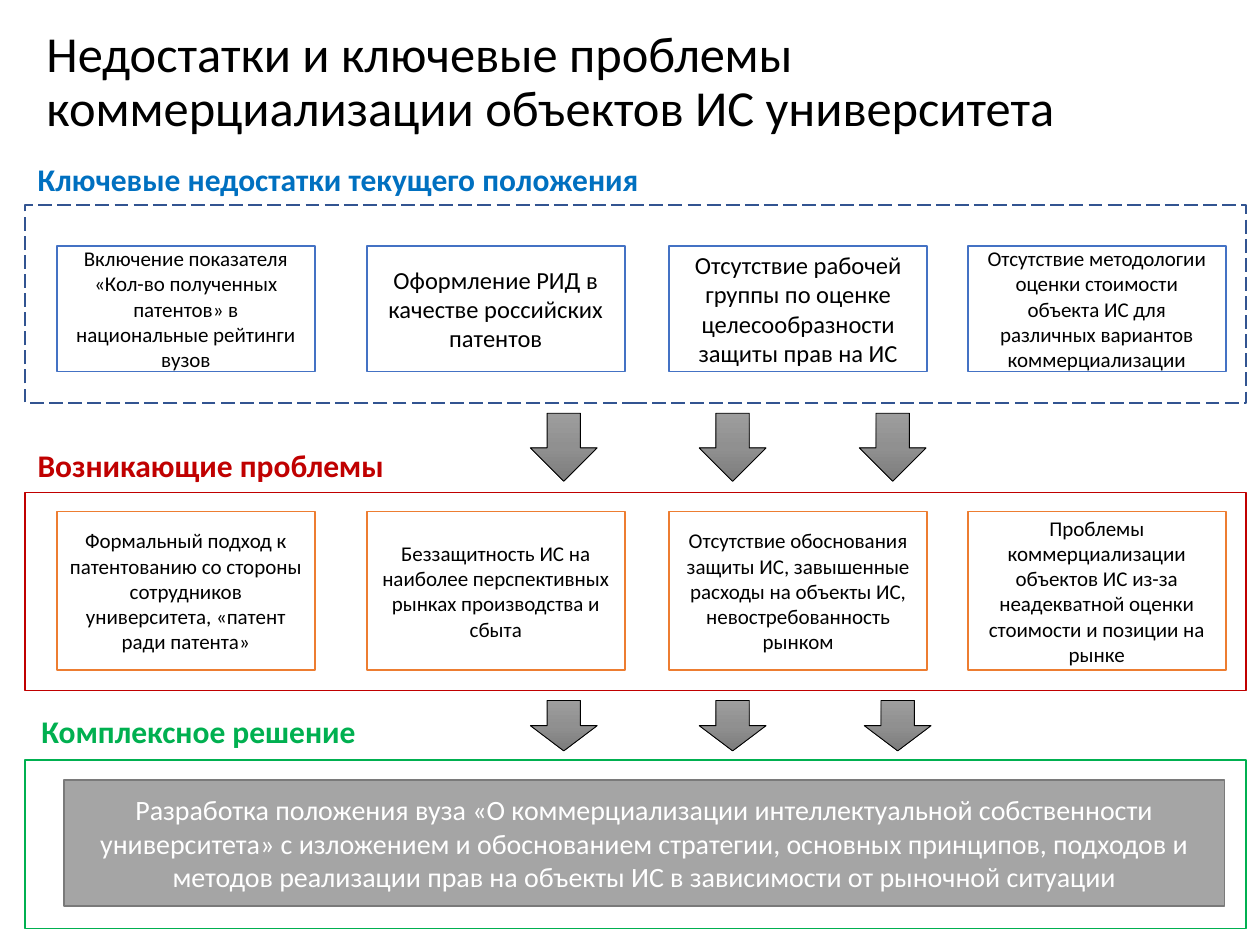
import copy

import pptx
import pptx.dml.color
import pptx.enum.dml
import pptx.enum.shapes
import pptx.enum.text
import pptx.util

RGB = pptx.dml.color.RGBColor
SHAPE = pptx.enum.shapes.MSO_SHAPE
ALIGN = pptx.enum.text.PP_ALIGN
ANCHOR = pptx.enum.text.MSO_ANCHOR
DASH = pptx.enum.dml.MSO_LINE

BLACK, WHITE = RGB(0x00, 0x00, 0x00), RGB(0xFF, 0xFF, 0xFF)
BLUE, NAVY, SKY = RGB(0x44, 0x72, 0xC4), RGB(0x32, 0x54, 0x91), RGB(0x00, 0x70, 0xC0)
ORANGE, RED, GREEN = RGB(0xED, 0x7D, 0x31), RGB(0xC0, 0x00, 0x00), RGB(0x00, 0xB0, 0x50)
GRAY, GRAY_EDGE = RGB(0xA5, 0xA5, 0xA5), RGB(0x7A, 0x7A, 0x7A)
ARROW_TONES = ((0, RGB(0x9D, 0x9D, 0x9D)), (0.5, RGB(0x90, 0x90, 0x90)),
               (1, RGB(0x7C, 0x7C, 0x7C)))

# Grid of the page, and the measures shared by its blocks
COLUMNS, ROWS = 10, 7.5
FRAME_LEFT, FRAME_WIDTH = 0.2, 9.69
CARD_LEFTS, CARD_WIDTH = (0.45, 2.91, 5.31, 7.68), 2.05
ARROW_WIDTH = 0.53

DRAWBACKS = (
    ("Включение показателя «Кол-во полученных патентов» в национальные рейтинги вузов", 12),
    ("Оформление РИД в качестве российских патентов", 14),
    ("Отсутствие рабочей группы по оценке целесообразности защиты прав на ИС", 14),
    ("Отсутствие методологии оценки стоимости объекта ИС для различных вариантов "
     "коммерциализации", 12),
)
PROBLEMS = (
    ("Формальный подход к патентованию со стороны сотрудников университета, "
     "«патент ради патента»", 12),
    ("Беззащитность ИС на наиболее перспективных рынках производства и сбыта", 12),
    ("Отсутствие обоснования защиты ИС, завышенные расходы на объекты ИС, "
     "невостребованность рынком", 12),
    ("Проблемы коммерциализации объектов ИС из-за неадекватной оценки стоимости "
     "и позиции на рынке", 12),
)
SOLUTION = ("Разработка положения вуза «О коммерциализации интеллектуальной собственности "
            "университета» с изложением и обоснованием стратегии, основных принципов, "
            "подходов и методов реализации прав на объекты ИС в зависимости от рыночной "
            "ситуации")


class Page:
    """Holds the style and the current slide; lengths are grid columns and rows."""

    font_name = "Calibri"

    def __init__(self, deck):
        self.column = deck.slide_width / COLUMNS
        self.row = deck.slide_height / ROWS
        self.shapes = deck.slides.add_slide(deck.slide_layouts[6]).shapes

    def place(self, left, top, width, height):
        return (round(left * self.column), round(top * self.row),
                round(width * self.column), round(height * self.row))

    def fill_text(self, box, text, size, color, bold=False, wrap=True,
                  anchor=ANCHOR.MIDDLE, **para_format):
        frame = box.text_frame
        frame.word_wrap, frame.vertical_anchor = wrap, anchor
        para = frame.paragraphs[0]
        for name, value in para_format.items():
            setattr(para, name, value)
        span = para.add_run()
        span.text = text
        font_format = {"name": self.font_name, "size": pptx.util.Pt(size), "bold": bold}
        for name, value in font_format.items():
            setattr(span.font, name, value)
        span.font.color.rgb = color

    def text(self, place, text, size, color, **text_format):
        box = self.shapes.add_textbox(*self.place(*place))
        self.fill_text(box, text, size, color, **text_format)

    def heading(self, left, top, width, text, color):
        self.text((left, top, width, 0.4), text, 18, color, bold=True, wrap=False,
                  anchor=ANCHOR.TOP)

    def shape(self, kind, place, edge, weight=1, fill=None):
        shape = self.shapes.add_shape(kind, *self.place(*place))
        shape.shadow.inherit = False
        shape.line.color.rgb = edge
        shape.line.width = pptx.util.Pt(weight)
        if fill is None:
            shape.fill.background()
        else:
            shape.fill.solid()
            shape.fill.fore_color.rgb = fill
        return shape

    def frame(self, top, height, edge, dash=None):
        place = (FRAME_LEFT, top, FRAME_WIDTH, height)
        self.shape(SHAPE.RECTANGLE, place, edge).line.dash_style = dash

    def card(self, place, text, size, edge, fill=WHITE, color=BLACK):
        box = self.shape(SHAPE.RECTANGLE, place, edge, fill=fill)
        self.fill_text(box, text, size, color, alignment=ALIGN.CENTER)

    def cards(self, top, height, entries, edge):
        for left, (text, size) in zip(CARD_LEFTS, entries):
            self.card((left, top, CARD_WIDTH, height), text, size, edge)

    def arrows(self, lefts, top, height):
        for left in lefts:
            arrow = self.shape(SHAPE.DOWN_ARROW, (left, top, ARROW_WIDTH, height), BLACK, 0.5)
            arrow.fill.gradient()
            arrow.fill.gradient_angle = 270
            # The default gradient has two stops; a third goes between them
            first = arrow.element.xpath(".//a:gs")[0]
            first.addnext(copy.deepcopy(first))
            for stop, (position, tone) in zip(arrow.fill.gradient_stops, ARROW_TONES):
                stop.position = position
                stop.color.rgb = tone


def main():
    deck = pptx.Presentation()
    deck.slide_width = pptx.util.Inches(10)
    deck.slide_height = pptx.util.Inches(7.5)
    page = Page(deck)

    # Title
    page.text((0.27, 0.19, 9.37, 0.94),
              "Недостатки и ключевые проблемы коммерциализации объектов ИС университета",
              28.8, BLACK, line_spacing=0.9)

    # Drawbacks
    page.heading(0.2, 1.22, 5.01, "Ключевые недостатки текущего положения", SKY)
    page.cards(1.95, 1, DRAWBACKS, BLUE)
    page.frame(1.63, 1.57, NAVY, DASH.LONG_DASH)
    page.arrows((4.21, 5.55, 6.82), 3.28, 0.54)

    # Problems
    page.heading(0.2, 3.49, 2.97, "Возникающие проблемы", RED)
    page.cards(4.06, 1.26, PROBLEMS, ORANGE)
    page.frame(3.91, 1.57, RED)
    page.arrows((4.21, 5.55, 6.86), 5.56, 0.4)

    # Solution
    page.heading(0.23, 5.6, 2.7, "Комплексное решение", GREEN)
    page.card((0.51, 6.19, 9.21, 1), SOLUTION, 16, GRAY_EDGE, GRAY, WHITE)
    page.frame(6.03, 1.34, GREEN)

    deck.save("out.pptx")


if __name__ == "__main__":
    main()
